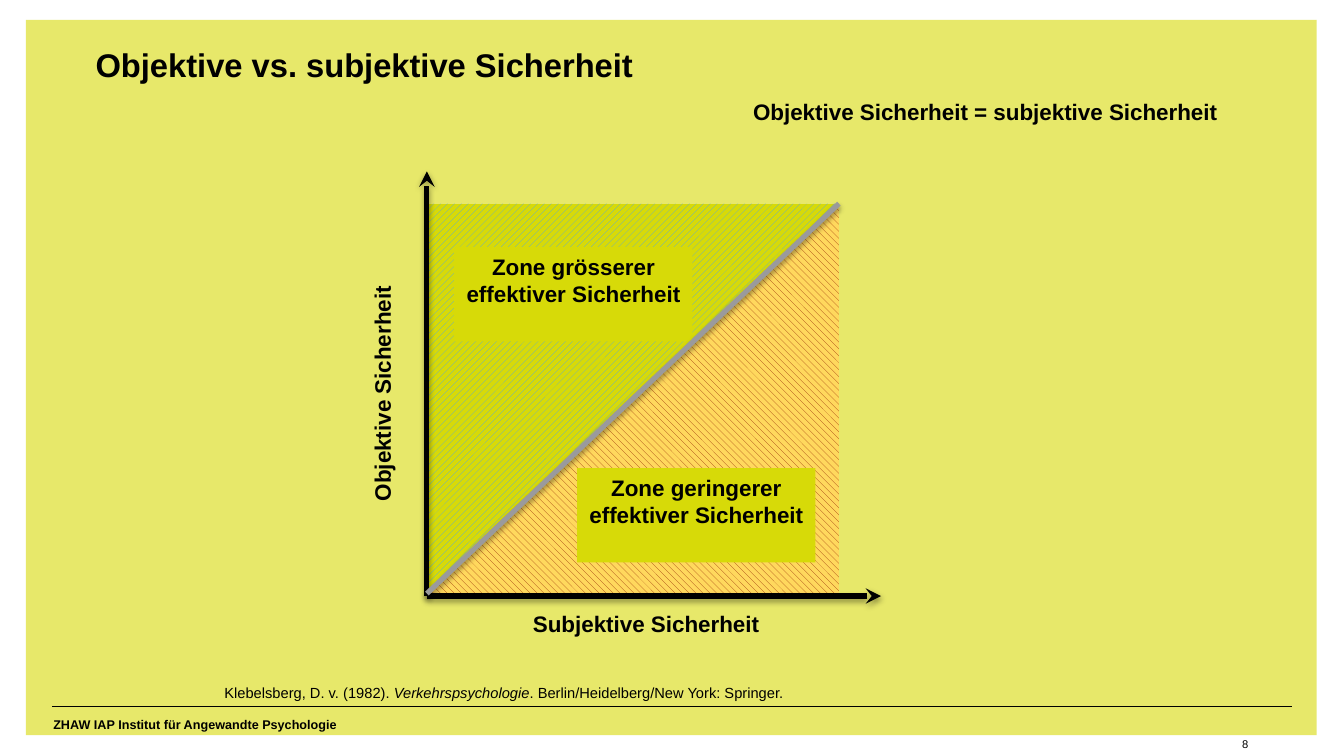
from lxml import etree
from pptx import Presentation
from pptx.enum import dml, shapes, text
from pptx.dml.color import RGBColor
from pptx.oxml import ns
from pptx.util import Inches, Pt

FONT = "Arial"
COLORS = {"ink": "000000", "lime": "D7DA08", "blue": "56A8DE",
          "sand": "FFD85D", "rust": "A03B0E", "gray": "9A9A9C"}
MID = text.PP_ALIGN.CENTER
PAD = (0.1, 0.05, 0.1, 0.05)
FLUSH = (0, 0, 0, 0)

PANEL = (0.21, 0.16, 10.4, 5.76)
TITLE = "Objektive vs. subjektive Sicherheit"
TITLE_BOX = (0.77, 0.36, 7.8, 0.71)
SOURCE = [("Klebelsberg, D. v. (1982). ", False),
          ("Verkehrspsychologie", True),
          (". Berlin/Heidelberg/New York: Springer.", False)]

# Plot area: origin, far corner and arrow tips
LEFT, BASE, RIGHT, TOP = 3.44, 4.78, 6.76, 1.64
AXIS_Y, TIP_X, TIP_Y = 4.8, 7.1, 1.38

ZONES = [
    ([(RIGHT, TOP), (LEFT, BASE), (RIGHT, BASE)],
     dml.MSO_PATTERN.WIDE_DOWNWARD_DIAGONAL, "rust", "sand"),
    ([(LEFT, BASE), (RIGHT, TOP), (LEFT, TOP)],
     dml.MSO_PATTERN.WIDE_UPWARD_DIAGONAL, "blue", "lime"),
]
AXES = [(LEFT, AXIS_Y, LEFT, TIP_Y), (LEFT, AXIS_Y, TIP_X, AXIS_Y)]
TAGS = [("Zone geringerer effektiver Sicherheit", (4.65, 3.77, 1.92, 0.76)),
        ("Zone grösserer effektiver Sicherheit", (3.66, 1.99, 1.92, 0.76))]
LABELS = [
    ("ZHAW IAP Institut für Angewandte Psychologie", (0.43, 5.77, 4.9, 0.19),
     dict(size=7.3, pad=FLUSH)),
    ("8", (9.32, 5.94, 0.74, 0.14),
     dict(size=6.5, bold=False, align=text.PP_ALIGN.RIGHT, pad=FLUSH)),
    (SOURCE, (1.71, 5.46, 7.41, 0.26), dict(size=8.5, bold=False)),
    ("Subjektive Sicherheit", (3.44, 4.86, 3.53, 0.32), dict(align=MID)),
    ("Objektive Sicherheit", (1.45, 3.01, 3.26, 0.32),
     dict(align=MID, turn=270)),
    ("Objektive Sicherheit = subjektive Sicherheit", (5.97, 0.74, 3.94, 0.54),
     dict(pad=(0.1, 0.05, 0, 0.05))),
]

deck = Presentation()
deck.slide_width, deck.slide_height = Inches(10.83), Inches(6.08)
slide = deck.slides.add_slide(deck.slide_layouts[5])


def rgb(name):
    return RGBColor.from_string(COLORS[name])


def sub(node, tag, **attrs):
    return etree.SubElement(node, ns.qn(tag), attrs)


def write(shape, words, size=13, bold=True, align=text.PP_ALIGN.LEFT,
          pad=PAD, turn=0):
    """Fill a shape with one paragraph; words is a string or (text, italic) runs."""
    shape.rotation = turn
    frame = shape.text_frame
    frame.word_wrap = True
    frame.auto_size = text.MSO_AUTO_SIZE.NONE
    frame.vertical_anchor = text.MSO_ANCHOR.TOP
    (frame.margin_left, frame.margin_top,
     frame.margin_right, frame.margin_bottom) = map(Inches, pad)
    para = frame.paragraphs[0]
    para.alignment = align
    for part, slant in [(words, False)] if isinstance(words, str) else words:
        run = para.add_run()
        run.text = part
        font = run.font
        font.name, font.size = FONT, Pt(size)
        font.bold, font.italic = bold, slant
        font.color.rgb = rgb("ink")


def block(box):
    """Add a lime rectangle without outline or shadow."""
    shape = slide.shapes.add_shape(shapes.MSO_SHAPE.RECTANGLE,
                                   *map(Inches, box))
    shape.shadow.inherit = False
    shape.fill.solid()
    shape.fill.fore_color.rgb = rgb("lime")
    shape.line.fill.background()
    return shape


def zone(points, pattern, fore, back):
    start, *rest = [(Inches(x), Inches(y)) for x, y in points]
    build = slide.shapes.build_freeform(*start)
    build.add_line_segments(rest, close=True)
    shape = build.convert_to_shape()
    shape.shadow.inherit = False
    shape.line.fill.background()
    shape.fill.patterned()
    shape.fill.pattern = pattern
    shape.fill.fore_color.rgb = rgb(fore)
    shape.fill.back_color.rgb = rgb(back)


def line(ends, color="ink", width=3, arrow=False, shade=True):
    link = slide.shapes.add_connector(shapes.MSO_CONNECTOR.STRAIGHT,
                                      *map(Inches, ends))
    link.line.color.rgb = rgb(color)
    link.line.width = Pt(width)
    props = link.element.spPr
    if arrow:
        sub(props.find(ns.qn("a:ln")), "a:tailEnd", type="stealth")
    effects = sub(props, "a:effectLst")
    if shade:
        drop = sub(effects, "a:outerShdw", blurRad=str(Pt(3.1)),
                   dist=str(Pt(1.6)), dir="5400000", rotWithShape="0")
        tint = sub(drop, "a:srgbClr", val=COLORS["ink"])
        sub(tint, "a:alpha", val="38000")


panel = block(PANEL)
tint = panel.element.spPr.find(ns.qn("a:solidFill"))[0]
sub(tint, "a:alpha", val="60000")
line((0.42, 5.69, 10.41, 5.69), width=0.25, shade=False)

for spec_row in ZONES:
    zone(*spec_row)

title = slide.shapes.title
title.left, title.top, title.width, title.height = map(Inches, TITLE_BOX)
write(title, TITLE, size=19, pad=FLUSH)
title.element.getparent().append(title.element)  # bring in front of the panel

for words, box, style in LABELS:
    write(slide.shapes.add_textbox(*map(Inches, box)), words, **style)
for ends in AXES:
    line(ends, arrow=True)
for words, box in TAGS:
    write(block(box), words, align=MID, pad=(0.08, 0.05, 0.08, 0.05))
line((LEFT, BASE, RIGHT, TOP), color="gray")

deck.save("out.pptx")
